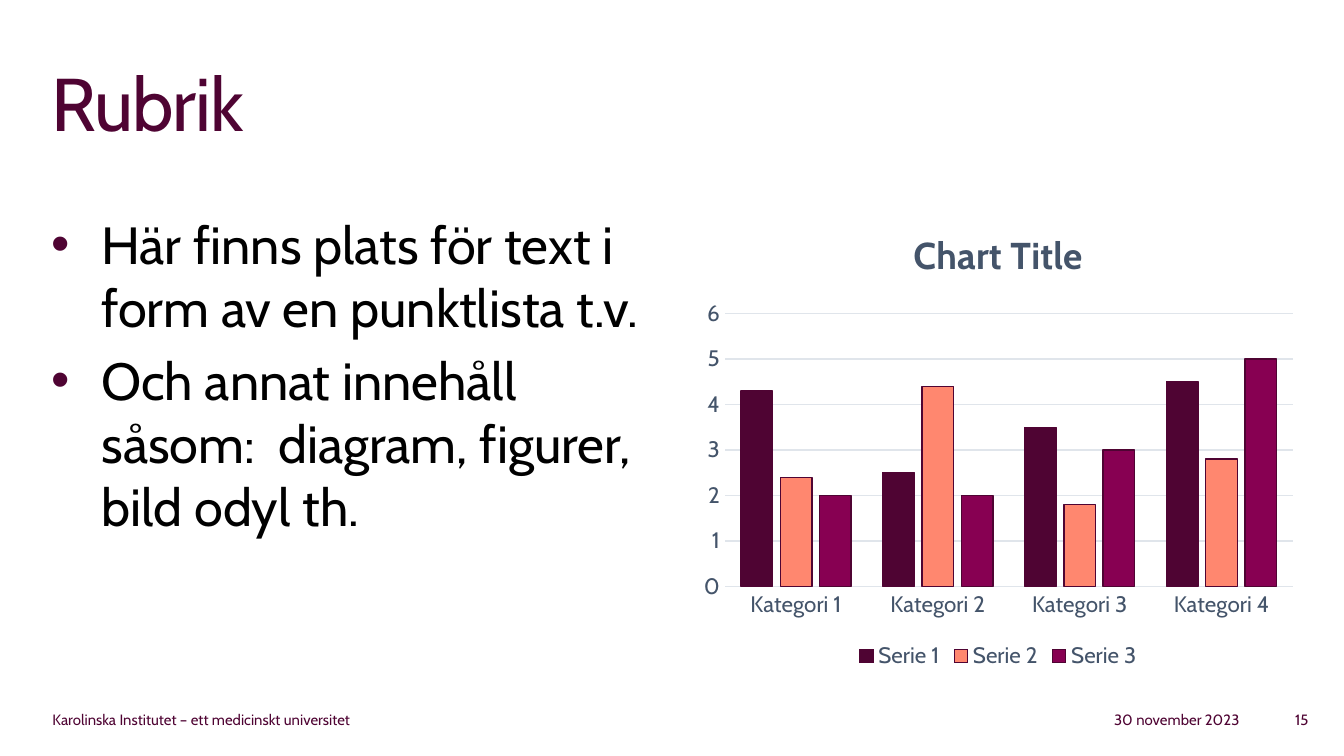
from lxml import etree
from pptx import Presentation
from pptx import util as u
from pptx.chart.data import CategoryChartData
from pptx.dml.color import RGBColor
from pptx.enum import chart as ch, text
from pptx.oxml.ns import qn

PX = 9525  # 96 px to the inch
FONT = "Cabin"
PLUM, CORAL, BERRY = "4F0433", "FF876F", "870052"
BLACK, SLATE, MIST = "000000", "44546A", "E0E5EB"

CATEGORIES = ["Kategori 1", "Kategori 2", "Kategori 3", "Kategori 4"]
SERIES = [
    ("Serie 1", (4.3, 2.5, 3.5, 4.5), PLUM),
    ("Serie 2", (2.4, 4.4, 1.8, 2.8), CORAL),
    ("Serie 3", (2, 2, 3, 5), BERRY),
]
BULLETS = [
    "Här finns plats för text i form av en punktlista t.v.",
    "Och annat innehåll såsom:  diagram, figurer, bild odyl th.",
]


def px(*lengths):
    return [u.Emu(length * PX) for length in lengths]


def rgb(hex_string):
    return RGBColor.from_string(hex_string)


def style(font, size, color, **formats):
    font.color.rgb = rgb(color)
    for name, value in {"name": FONT, "size": u.Pt(size), **formats}.items():
        setattr(font, name, value)


def set_line(line, color):
    line.color.rgb = rgb(color)
    line.width = u.Pt(0.75)


def add_title(slide, box, wording):
    title = slide.shapes.title
    for name, value in zip(("left", "top", "width", "height"), px(*box)):
        setattr(title, name, value)
    frame = title.text_frame
    frame.auto_size = text.MSO_AUTO_SIZE.NONE
    frame.vertical_anchor = text.MSO_ANCHOR.TOP
    paragraph = frame.paragraphs[0]
    paragraph.alignment = text.PP_ALIGN.LEFT
    run = paragraph.add_run()
    run.text = wording
    style(run.font, 40, PLUM)
    run.font._element.set("spc", "-50")


def make_bullet(paragraph):
    properties = paragraph._p.get_or_add_pPr()
    indent = 36 * PX
    properties.set("marL", str(indent))
    properties.set("indent", str(-indent))
    color = etree.SubElement(properties, qn("a:buClr"))
    etree.SubElement(color, qn("a:srgbClr"), val=PLUM)
    etree.SubElement(properties, qn("a:buFont"), typeface="Arial")
    etree.SubElement(properties, qn("a:buChar"), char="•")


def add_bullets(slide, box, items):
    frame = slide.shapes.add_textbox(*px(*box)).text_frame
    frame.word_wrap = True
    for index, item in enumerate(items):
        paragraph = frame.add_paragraph() if index else frame.paragraphs[0]
        make_bullet(paragraph)
        if index:
            paragraph.space_before = u.Pt(5.6)
        run = paragraph.add_run()
        run.text = item
        style(run.font, 28, BLACK)


def add_column_chart(slide, box):
    data = CategoryChartData()
    data.categories = CATEGORIES
    for name, values, _ in SERIES:
        data.add_series(name, values)
    chart = slide.shapes.add_chart(
        ch.XL_CHART_TYPE.COLUMN_CLUSTERED, *px(*box), data).chart
    style(chart.font, 10, BLACK)

    chart.has_title = True
    heading = chart.chart_title.text_frame.paragraphs[0].add_run()
    heading.text = "Chart Title"
    style(heading.font, 20, SLATE, bold=True)
    chart.chart_title.include_in_layout = False

    chart.has_legend = True
    chart.legend.position = ch.XL_LEGEND_POSITION.BOTTOM
    chart.legend.include_in_layout = False
    style(chart.legend.font, 12, SLATE)

    categories, scale = chart.category_axis, chart.value_axis
    for axis in (categories, scale):
        axis.major_tick_mark = axis.minor_tick_mark = ch.XL_TICK_MARK.NONE
        style(axis.tick_labels.font, 12, SLATE)
    set_line(categories.format.line, MIST)
    scale.format.line.fill.background()
    set_line(scale.major_gridlines.format.line, MIST)
    limits = {"minimum_scale": 0, "maximum_scale": 6, "major_unit": 1}
    for name, value in limits.items():
        setattr(scale, name, value)

    plot = chart.plots[0]
    plot.vary_by_categories = False
    plot.gap_width, plot.overlap = 100, -24
    for series, (_, _, color) in zip(plot.series, SERIES):
        series.format.fill.solid()
        series.format.fill.fore_color.rgb = rgb(color)
        set_line(series.format.line, PLUM)


def add_footer(slide, box, wording, alignment):
    frame = slide.shapes.add_textbox(*px(*box)).text_frame
    frame.word_wrap = True
    frame.vertical_anchor = text.MSO_ANCHOR.MIDDLE
    paragraph = frame.paragraphs[0]
    paragraph.alignment = alignment
    run = paragraph.add_run()
    run.text = wording
    style(run.font, 8, PLUM)


def main():
    deck = Presentation()
    deck.slide_width, deck.slide_height = px(960, 540)
    slide = deck.slides.add_slide(deck.slide_layouts[5])

    add_title(slide, (27, 36, 906, 90), "Rubrik")
    add_bullets(slide, (27, 147, 438, 335), BULLETS)
    add_column_chart(slide, (494, 147, 438, 335))

    left, right = text.PP_ALIGN.LEFT, text.PP_ALIGN.RIGHT
    add_footer(slide, (28, 505, 338, 18),
               "Karolinska Institutet – ett medicinskt universitet", left)
    add_footer(slide, (695, 505, 200, 18), "30 november 2023", right)
    add_footer(slide, (872, 505, 72, 18), "15", right)
    deck.save("out.pptx")


if __name__ == "__main__":
    main()
